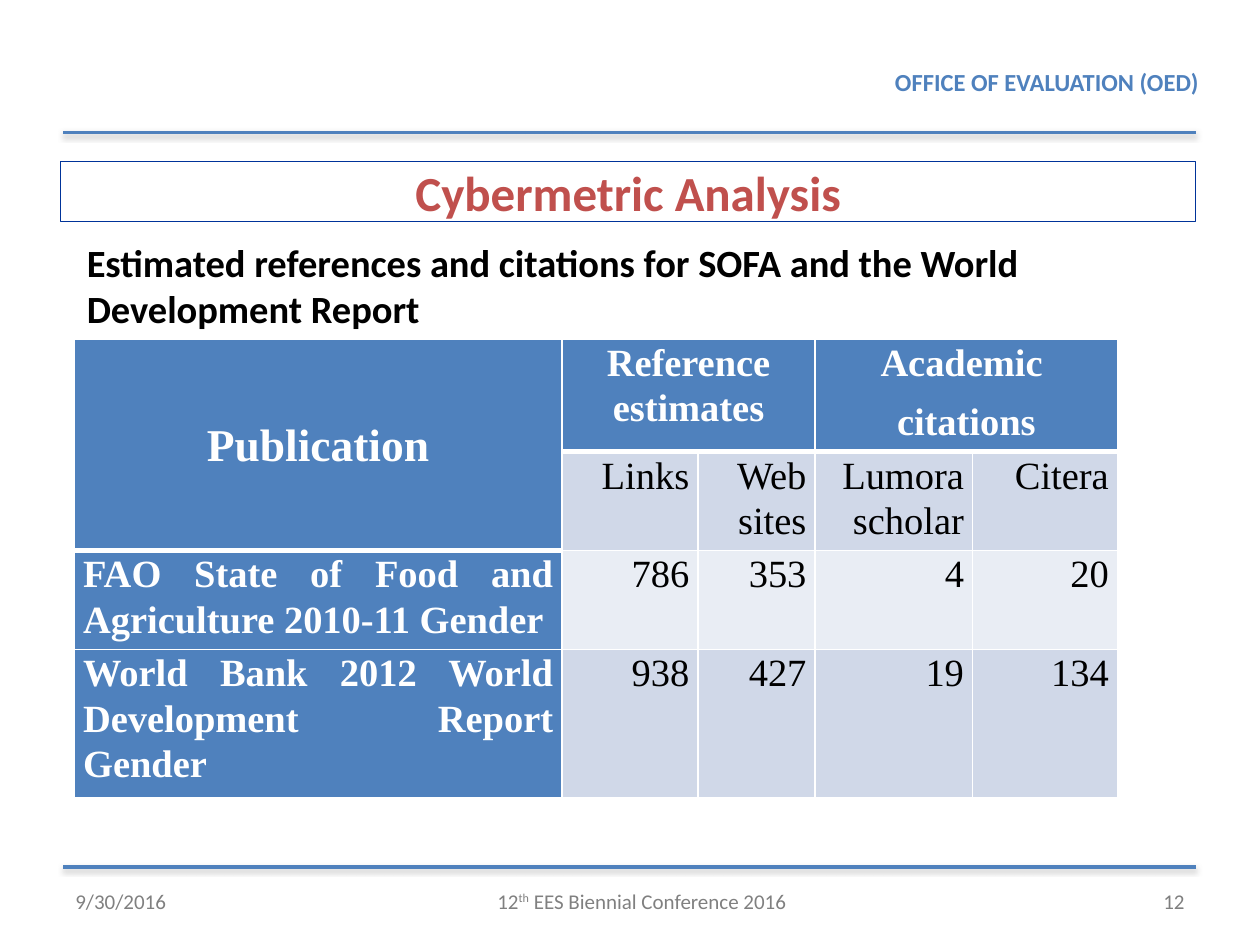
from lxml import etree
from pptx import Presentation
from pptx.dml.color import RGBColor
from pptx.enum.shapes import MSO_CONNECTOR
from pptx.enum.text import MSO_ANCHOR, MSO_AUTO_SIZE, PP_ALIGN
from pptx.oxml import parse_xml
from pptx.oxml.ns import nsdecls, qn
from pptx.util import Inches, Pt

LEFT, CENTER, RIGHT, JUSTIFY = PP_ALIGN.LEFT, PP_ALIGN.CENTER, PP_ALIGN.RIGHT, PP_ALIGN.JUSTIFY
TOP, MIDDLE = MSO_ANCHOR.TOP, MSO_ANCHOR.MIDDLE
COLORS = {
    "blue": "4F81BD", "navy": "003399", "red": "C0504D", "black": "000000",
    "white": "FFFFFF", "gray": "808080", "number": "7F7F7F",
    "band": "D0D8E8", "light": "E9EDF4",
}


def format_paragraph(paragraph, size, color, bold=False, align=LEFT, name="Calibri"):
    paragraph.alignment = align
    font = paragraph.font
    font.name, font.size, font.bold = name, Pt(size), bold
    font.color.rgb = RGBColor.from_string(COLORS[color])


def add_text(box, runs, size, color, bold=False, align=LEFT, anchor=MIDDLE):
    shape = slide.shapes.add_textbox(*map(Inches, box))
    frame = shape.text_frame
    frame.word_wrap = True
    frame.vertical_anchor = anchor
    paragraph = frame.paragraphs[0]
    for text, baseline in runs:
        run = paragraph.add_run()
        run.text = text
        if baseline:
            run.font._element.set("baseline", str(baseline * 1000))
    format_paragraph(paragraph, size, color, bold, align)


presentation = Presentation()
presentation.slide_width, presentation.slide_height = Inches(10), Inches(7.5)
slide = presentation.slides.add_slide(presentation.slide_layouts[5])

for y in (1.05, 6.88):
    rule = slide.shapes.add_connector(
        MSO_CONNECTOR.STRAIGHT, Inches(0.5), Inches(y), Inches(9.49), Inches(y))
    rule.line.color.rgb = RGBColor.from_string(COLORS["blue"])
    rule.line.width = Pt(2)
    rule._element.spPr.append(parse_xml(
        f'<a:effectLst {nsdecls("a")}><a:outerShdw blurRad="{Pt(3.1)}" dist="{Pt(1.6)}" '
        f'dir="5400000" rotWithShape="0"><a:srgbClr val="{COLORS["gray"]}">'
        '<a:alpha val="38000"/></a:srgbClr></a:outerShdw></a:effectLst>'))

title = slide.shapes.title
title.left, title.top, title.width, title.height = map(Inches, (0.48, 1.28, 9.01, 0.48))
title.line.color.rgb = RGBColor.from_string(COLORS["navy"])
title.line.width = Pt(0.75)
title.text_frame.text = "Cybermetric Analysis"
title.text_frame.auto_size = MSO_AUTO_SIZE.NONE
title.text_frame.vertical_anchor = MIDDLE
format_paragraph(title.text_frame.paragraphs[0], 28, "red", True, CENTER)

add_text((6.83, 0.52, 2.96, 0.25), [("OFFICE OF EVALUATION (OED)", 0)], 14, "blue", True, CENTER)
add_text((0.59, 1.85, 8.79, 0.84),
         [("Estimated references and citations for SOFA and the World Development Report", 0)],
         22, "black", True, anchor=TOP)
add_text((0.5, 6.95, 2.33, 0.4), [("9/30/2016", 0)], 12, "gray")
add_text((3.51, 6.95, 3.17, 0.4),
         [("12", 0), ("th", 30), (" EES Biennial Conference 2016", 0)], 12, "gray", align=CENTER)
add_text((7.17, 6.95, 2.33, 0.4), [("12", 0)], 12, "number", align=RIGHT)

column_widths = [3.87, 1.08, 0.93, 1.25, 1.15]
row_heights = [0.82, 0.52, 0.52, 0.52]
rows = [
    ["Publication", "Reference estimates", "", "Academic \ncitations", ""],
    ["", "Links", "Web sites", "Lumora scholar", "Citera"],
    ["FAO State of Food and Agriculture 2010-11 Gender", "786", "353", "4", "20"],
    ["World Bank 2012 World Development Report Gender", "938", "427", "19", "134"],
]
table = slide.shapes.add_table(
    len(rows), len(column_widths), Inches(0.59), Inches(2.69),
    Inches(sum(column_widths)), Inches(sum(row_heights))).table
table.first_row = False
for column, width in zip(table.columns, column_widths):
    column.width = Inches(width)
for row, height in zip(table.rows, row_heights):
    row.height = Inches(height)
for first, last in (((0, 0), (1, 0)), ((0, 1), (0, 2)), ((0, 3), (0, 4))):
    table.cell(*first).merge(table.cell(*last))

for row_index, texts in enumerate(rows):
    for column_index, text in enumerate(texts):
        cell = table.cell(row_index, column_index)
        heading = row_index == 0 or column_index == 0
        header_rows = 1 if column_index else 2
        cell.margin_left = cell.margin_right = Inches(0.07)
        cell.margin_top = cell.margin_bottom = 0
        cell.vertical_anchor = MIDDLE if text == "Publication" else TOP

        edges = {"L": 1, "R": 1,
                 "T": 3 if row_index == header_rows else 1,
                 "B": 3 if row_index == header_rows - 1 else 1}
        for side, width in edges.items():
            border = etree.SubElement(
                cell._tc.get_or_add_tcPr(), qn(f"a:ln{side}"), w=str(Pt(width)))
            fill = etree.SubElement(border, qn("a:solidFill"))
            etree.SubElement(fill, qn("a:srgbClr"), val=COLORS["white"])

        cell.fill.solid()
        background = "blue" if heading else "light" if row_index == 2 else "band"
        cell.fill.fore_color.rgb = RGBColor.from_string(COLORS[background])
        if not text:
            continue
        cell.text_frame.text = text
        align = CENTER if row_index == 0 else RIGHT if column_index else JUSTIFY
        for paragraph in cell.text_frame.paragraphs:
            paragraph.line_spacing = 1.07
            paragraph.space_after = Pt(8)
            format_paragraph(paragraph, 26 if text == "Publication" else 22,
                             "white" if heading else "black", heading, align, "Times New Roman")

presentation.save("out.pptx")
